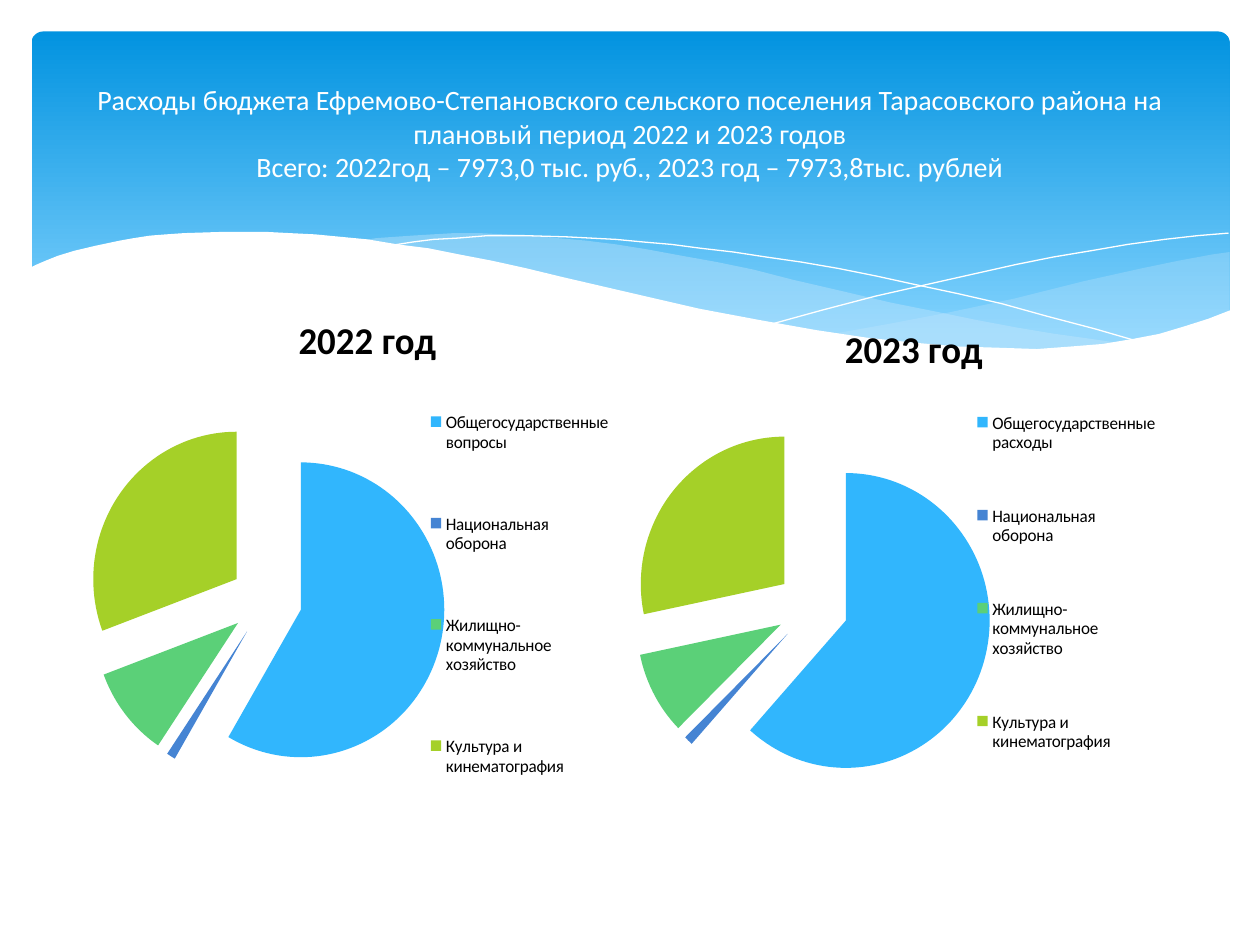
from pptx import Presentation
from pptx.chart.data import CategoryChartData
from pptx.dml.color import RGBColor
from pptx.enum.chart import XL_CHART_TYPE, XL_LEGEND_POSITION
from pptx.enum.shapes import MSO_SHAPE
from pptx.enum.text import MSO_ANCHOR, PP_ALIGN
from pptx.oxml.xmlchemy import OxmlElement
from pptx.util import Cm, Pt

PIE = XL_CHART_TYPE.PIE
RIGHT = XL_LEGEND_POSITION.RIGHT
ROUND = MSO_SHAPE.ROUNDED_RECTANGLE
MIDDLE = MSO_ANCHOR.MIDDLE
CENTER = PP_ALIGN.CENTER
FONT = "Calibri"
WHITE, BLACK, PALE = "FFFFFF", "000000", "C6E7FC"
SLICES = ["31B6FD", "4584D3", "5BD078", "A5D028"]
GRID = 2.54  # one grid unit in centimetres

# Outlines of the header waves, in grid units
RIGHT_BAND = [
    (9.76, 2), (9.62, 2.02), (9.35, 2.07), (9.06, 2.13), (8.61, 2.23), (8.05, 2.37),
    (7.53, 2.48), (7.06, 2.57), (6.61, 2.65), (6.91, 2.69), (7.19, 2.72), (7.45, 2.75),
    (7.69, 2.77), (8.03, 2.78), (8.35, 2.77), (8.63, 2.75), (8.89, 2.72), (9.13, 2.67),
    (9.35, 2.62), (9.49, 2.57), (9.63, 2.52), (9.76, 2.47)]
LONG_BAND = [
    (8.93, 2.73), (8.66, 2.69), (8.37, 2.65), (8.07, 2.6), (7.75, 2.54), (7.41, 2.47),
    (7.06, 2.4), (6.68, 2.31), (6.29, 2.22), (5.98, 2.14), (5.69, 2.08), (5.41, 2.03),
    (5.14, 1.98), (4.89, 1.94), (4.65, 1.91), (4.42, 1.89), (4.2, 1.87), (3.99, 1.86),
    (3.8, 1.85), (3.61, 1.85), (3.28, 1.87), (2.99, 1.89), (2.86, 1.91), (3.23, 1.96),
    (3.62, 2.03), (4.04, 2.11), (4.49, 2.22), (4.91, 2.32), (5.3, 2.4), (5.66, 2.48),
    (6.01, 2.55), (6.34, 2.61), (6.65, 2.66), (6.95, 2.7), (7.22, 2.74), (7.48, 2.76),
    (7.73, 2.77), (7.96, 2.78), (8.38, 2.78), (8.67, 2.76)]
FALL_LINE = [
    (3.09, 1.95), (3.28, 1.92), (3.44, 1.9), (3.63, 1.89), (3.87, 1.87), (4.16, 1.87),
    (4.5, 1.88), (4.89, 1.9), (5.1, 1.92), (5.33, 1.94), (5.56, 1.97), (5.82, 2),
    (6.08, 2.04), (6.36, 2.08), (6.65, 2.13), (6.95, 2.19), (7.27, 2.26), (7.6, 2.33),
    (7.95, 2.41), (8.31, 2.51), (8.69, 2.61), (9.07, 2.72)]
RISE_LINE = [
    (6.13, 2.57), (6.53, 2.46), (6.95, 2.35), (7.48, 2.23), (8.06, 2.1), (8.36, 2.04),
    (8.66, 1.99), (8.95, 1.94), (9.24, 1.9), (9.51, 1.87), (9.75, 1.85)]
WAVE = [
    (9.77, 2.46), (9.59, 2.53), (9.4, 2.59), (9.2, 2.65), (8.99, 2.69), (8.75, 2.73),
    (8.5, 2.75), (8.23, 2.77), (7.93, 2.76), (7.61, 2.75), (7.26, 2.72), (6.88, 2.68),
    (6.48, 2.62), (6.03, 2.54), (5.55, 2.45), (5.03, 2.33), (4.47, 2.2), (4.18, 2.13),
    (3.91, 2.07), (3.65, 2.02), (3.4, 1.97), (3.16, 1.94), (2.92, 1.9), (2.71, 1.88),
    (2.5, 1.86), (2.3, 1.85), (2.11, 1.84), (1.77, 1.84), (1.46, 1.85), (1.32, 1.86),
    (1.19, 1.87), (1.06, 1.89), (0.95, 1.91), (0.76, 1.95), (0.59, 1.99), (0.46, 2.03),
    (0.36, 2.07), (0.29, 2.1), (0.23, 2.13), (0.23, 3.29), (9.77, 3.29)]


def size(*units):
    return [Cm(unit * GRID) for unit in units]


def color(code):
    return RGBColor.from_string(code)


def node(tag, val):
    item = OxmlElement(tag)
    item.set("val", str(val))
    return item


class Deck:
    def __init__(self):
        self.show = Presentation()
        self.show.slide_width, self.show.slide_height = size(10, 7.5)
        self.slide = self.show.slides.add_slide(self.show.slide_layouts[6])
        self.shapes = self.slide.shapes

    def style(self, font, points, code, bold=False):
        font.name, font.size, font.bold = FONT, Pt(points), bold
        font.color.rgb = color(code)

    def panel(self, box, stops, radius):
        shape = self.shapes.add_shape(ROUND, *size(*box))
        shape.shadow.inherit = False
        shape.adjustments[0] = radius
        shape.line.fill.background()
        shape.fill.gradient()
        shape.fill.gradient_angle = 270
        for stop, (place, code) in zip(shape.fill.gradient_stops, stops):
            stop.position = place
            stop.color.rgb = color(code)

    def trace(self, points, closed):
        first, *rest = [size(*point) for point in points]
        pen = self.shapes.build_freeform(*first)
        pen.add_line_segments(rest, close=closed)
        shape = pen.convert_to_shape()
        shape.shadow.inherit = False
        return shape

    def area(self, points, code, alpha=100):
        shape = self.trace(points, True)
        shape.line.fill.background()
        shape.fill.solid()
        shape.fill.fore_color.rgb = color(code)
        if alpha < 100:
            shape.fill._xPr.find(".//{*}srgbClr").append(node("a:alpha", alpha * 1000))

    def curve(self, points, code):
        shape = self.trace(points, False)
        shape.fill.background()
        shape.line.color.rgb = color(code)
        shape.line.width = Pt(0)

    def text(self, box, words, points, code):
        frame = self.shapes.add_textbox(*size(*box)).text_frame
        frame.word_wrap = True
        frame.vertical_anchor = MIDDLE
        frame.text = words
        para = frame.paragraphs[0]
        para.alignment = CENTER
        for run in para.runs:
            self.style(run.font, points, code)

    def place(self, part, index, box, inner=False):
        for old in part.findall("{*}layout"):
            part.remove(old)
        layout, manual = OxmlElement("c:layout"), OxmlElement("c:manualLayout")
        if inner:
            manual.append(node("c:layoutTarget", "inner"))
        sides = list(zip("xywh", box))
        for side, _ in sides[:2]:
            manual.append(node(f"c:{side}Mode", "edge"))
        for side, share in sides:
            manual.append(node(f"c:{side}", share))
        layout.append(manual)
        part.insert(index, layout)

    def pie(self, box, title, name, cats, vals, key, disc):
        data = CategoryChartData()
        data.categories = cats
        data.add_series(name, vals)
        chart = self.shapes.add_chart(PIE, *size(*box), data).chart
        self.style(chart.font, 18, BLACK)

        # Title and legend
        frame = chart.chart_title.text_frame
        frame.text = title
        self.style(frame.paragraphs[0].runs[0].font, 21.6, BLACK, True)
        chart.has_legend = True
        chart.legend.position = RIGHT
        chart.legend.include_in_layout = False
        self.style(chart.legend.font, 10, BLACK)

        # Slices, pulled apart
        plot = chart.plots[0]
        plot.vary_by_categories = True
        series = plot.series[0]
        for index, code in enumerate(SLICES):
            fill = series.points[index].format.fill
            fill.solid()
            fill.fore_color.rgb = color(code)
        for look in series._element.findall("{*}dPt/{*}spPr"):
            look.addprevious(node("c:explosion", 25))

        # Places inside the chart
        self.place(chart.chart_title._element, 1, (0.36, 0.04))
        self.place(chart.legend._element, 1, key)
        self.place(chart._chartSpace.find(".//{*}plotArea"), 0, disc, True)


def main():
    deck = Deck()

    # Header with waves
    deck.panel((0.25, 0.25, 9.51, 2.7), [(0, "0293E0"), (0.9, "83D3FE")], 0.034)
    deck.area(RIGHT_BAND, PALE, 29)
    deck.area(LONG_BAND, PALE, 40)
    deck.curve(FALL_LINE, WHITE)
    deck.curve(RISE_LINE, WHITE)
    deck.area(WAVE, WHITE)

    # Title
    deck.text((0.5, 0.37, 9, 1.37),
              "Расходы бюджета Ефремово-Степановского сельского поселения "
              "Тарасовского района на плановый период 2022 и 2023 годов\v"
              "Всего: 2022год – 7973,0 тыс. руб., 2023 год – 7973,8тыс. рублей", 16, WHITE)

    # Spending by year
    common = ["Национальная оборона", "Жилищно-коммунальное хозяйство",
              "Культура и кинематография"]
    deck.pie((0.74, 2.25, 4.18, 4.45), "2022 год", "Series 1",
             ["Общегосударственные вопросы", *common], (59, 1, 10, 31),
             (0.64, 0.12, 0.35, 0.87), (0.03, 0.3, 0.56, 0.53))
    deck.pie((5.08, 2.33, 4.18, 4.37), "2023 год", "2023 год",
             ["Общегосударственные расходы", *common], (61, 1, 9, 28),
             (0.64, 0.12, 0.35, 0.81), (0.03, 0.3, 0.56, 0.54))
    deck.show.save("out.pptx")


if __name__ == "__main__":
    main()
